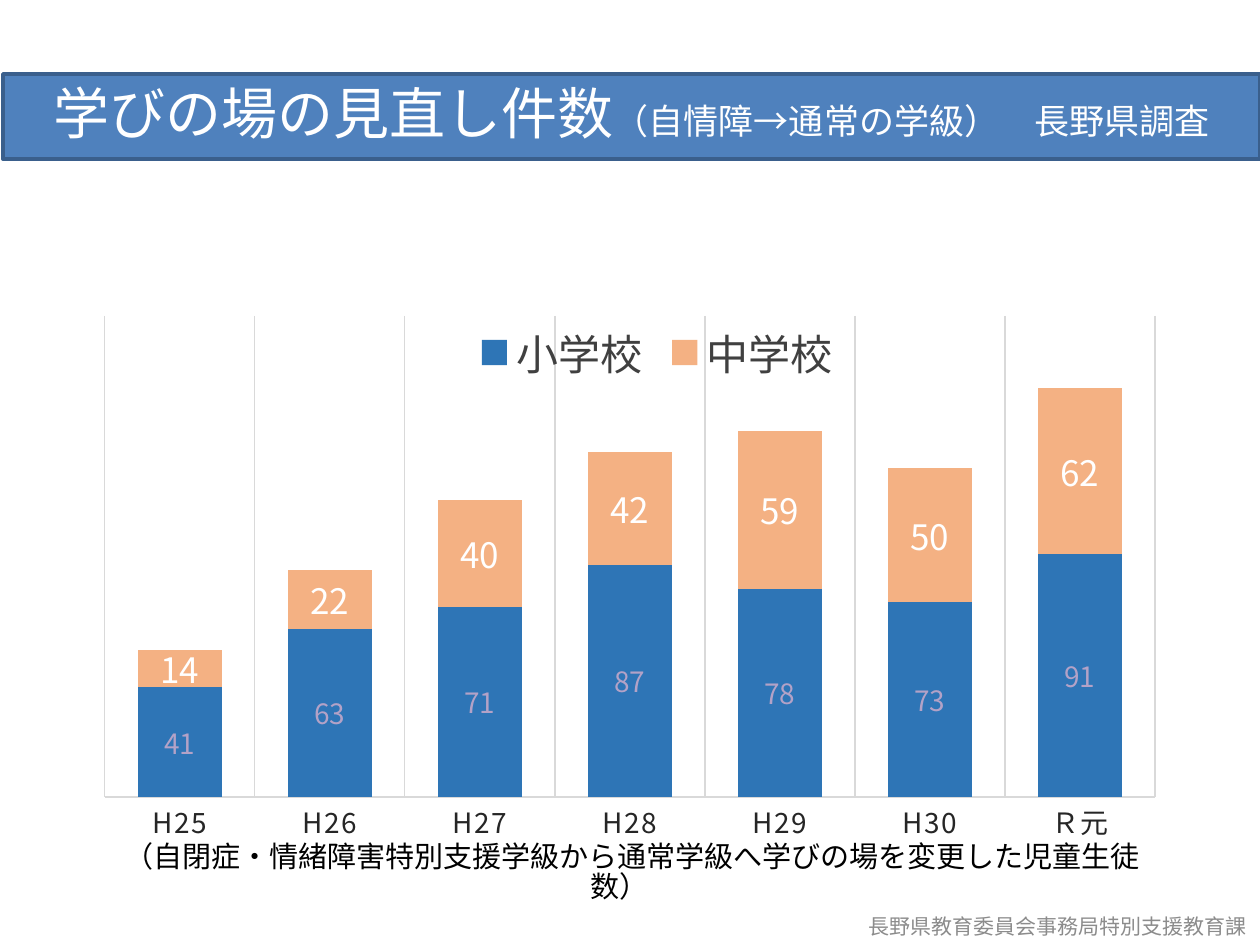
from dataclasses import dataclass

from lxml import etree
from pptx import Presentation
from pptx.chart.data import CategoryChartData
from pptx.dml.color import RGBColor
from pptx.enum.chart import (XL_CHART_TYPE, XL_LABEL_POSITION,
                             XL_LEGEND_POSITION, XL_TICK_MARK)
from pptx.enum.shapes import MSO_SHAPE
from pptx.enum.text import MSO_ANCHOR, PP_ALIGN
from pptx.oxml.ns import qn
from pptx.util import Emu, Pt

STACKED = XL_CHART_TYPE.COLUMN_STACKED
MID_LABEL = XL_LABEL_POSITION.CENTER
LEGEND_TOP = XL_LEGEND_POSITION.TOP
NO_TICK = XL_TICK_MARK.NONE
RECT = MSO_SHAPE.RECTANGLE
TOP, MIDDLE = MSO_ANCHOR.TOP, MSO_ANCHOR.MIDDLE
CENTER = PP_ALIGN.CENTER

PX = 914400 / 126
NOTO = "Noto Sans CJK JP"
GRID = "D9D9D9"
YEARS = ["H25", "H26", "H27", "H28", "H29", "H30", "Ｒ元"]


@dataclass
class Box:
    left: int
    top: int
    width: int
    height: int

    def emu(self) -> list[Emu]:
        return [Emu(round(n * PX)) for n in
                (self.left, self.top, self.width, self.height)]


@dataclass
class Run:
    text: str
    size: float
    color: str
    face: str = NOTO


@dataclass
class School:
    name: str
    counts: list[int]
    fill: str
    size: int
    color: str


SCHOOLS = [
    School("小学校", [41, 63, 71, 87, 78, 73, 91], "2E75B6", 16, "B3A2C7"),
    School("中学校", [14, 22, 40, 42, 59, 50, 62], "F4B183", 20, "FFFFFF"),
]


def rgb(value: str) -> RGBColor:
    return RGBColor.from_string(value)


def style(font, size: float, color: str, face: str = NOTO) -> None:
    font.size = Pt(size)
    font.color.rgb = rgb(color)
    font.name = face
    etree.SubElement(font._element, qn("a:ea")).set("typeface", NOTO)


def write(shape, runs: list[Run], anchor, spacing: float = 1.0):
    """Fill a shape with one centred paragraph."""
    frame = shape.text_frame
    frame.word_wrap = True
    frame.vertical_anchor = anchor
    para = frame.paragraphs[0]
    para.alignment = CENTER
    para.line_spacing = spacing
    for item in runs:
        run = para.add_run()
        run.text = item.text
        style(run.font, item.size, item.color, item.face)
    return frame


def place(parent, index: int, target: str | None, **spots: float) -> None:
    """Give a chart part a manual layout, in fractions of the chart."""
    for old in parent.findall(qn("c:layout")):
        parent.remove(old)
    layout = etree.Element(qn("c:layout"))
    manual = etree.SubElement(layout, qn("c:manualLayout"))
    parts = {"layoutTarget": target} if target else {}
    parts |= {"xMode": "edge", "yMode": "edge"} | spots
    for tag, value in parts.items():
        etree.SubElement(manual, qn(f"c:{tag}")).set("val", str(value))
    parent.insert(index, layout)


def draw_chart(slide, box: Box) -> None:
    data = CategoryChartData()
    data.categories = YEARS
    for school in SCHOOLS:
        data.add_series(school.name, school.counts)
    chart = slide.shapes.add_chart(STACKED, *box.emu(), data).chart
    chart.has_title = False
    chart.font.size = Pt(10)
    chart.font.name = "Calibri"

    plot = chart.plots[0]
    plot.gap_width, plot.overlap = 79, 100
    plot.vary_by_categories = False
    for series, school in zip(plot.series, SCHOOLS):
        series.format.fill.solid()
        series.format.fill.fore_color.rgb = rgb(school.fill)
        labels = series.data_labels
        labels.show_value = True
        labels.position = MID_LABEL
        style(labels.font, school.size, school.color)

    years = chart.category_axis
    years.major_tick_mark = years.minor_tick_mark = NO_TICK
    years.has_major_gridlines = True
    for line in (years.format.line, years.major_gridlines.format.line):
        line.color.rgb = rgb(GRID)
        line.width = Pt(0.75)
    label = years.tick_labels.font
    style(label, 16, "262626")
    label._element.set("spc", "120")

    counts = chart.value_axis
    counts.minimum_scale, counts.maximum_scale = 0, 180
    counts.has_major_gridlines = False
    counts.visible = False

    chart.has_legend = True
    legend = chart.legend
    legend.position = LEGEND_TOP
    legend.include_in_layout = False
    style(legend.font, 24, "404040")
    place(legend._element, 1, None, x=0.36, y=0.09, w=0.35, h=0.09)
    place(chart._chartSpace.chart.plotArea, 0, "inner",
          x=0.03, y=0.08, w=0.96, h=0.77)


def draw_banner(slide, box: Box) -> None:
    banner = slide.shapes.add_shape(RECT, *box.emu())
    banner.shadow.inherit = False
    banner.fill.solid()
    banner.fill.fore_color.rgb = rgb("4F81BD")
    banner.line.color.rgb = rgb("3A5F8C")
    banner.line.width = Pt(2)
    write(banner, [
        Run("学びの場の見直し件数", 32, "FFFFFF"),
        Run("（自情障→通常の学級）　長野県調査", 20, "FFFFFF"),
    ], MIDDLE, 0.9)


def main() -> None:
    deck = Presentation()
    deck.slide_width, deck.slide_height = Box(0, 0, 1260, 945).emu()[2:]
    slide = deck.slides.add_slide(deck.slide_layouts[6])

    draw_chart(slide, Box(72, 266, 1094, 625))

    note = slide.shapes.add_textbox(*Box(81, 824, 1076, 78).emu())
    frame = write(note, [Run(
        "（自閉症・情緒障害特別支援学級から通常学級へ学びの場を変更した児童生徒数）",
        16.6, "000000")], TOP, 0.86)
    frame.margin_top = Emu(round(20 * PX))
    frame.paragraphs[0]._p.get_or_add_pPr().set("indent", str(round(25 * PX)))

    draw_banner(slide, Box(3, 74, 1257, 85))

    source = slide.shapes.add_textbox(*Box(832, 901, 451, 50).emu())
    write(source, [Run("長野県教育委員会事務局特別支援教育課", 12, "8C8C8C",
                       "Calibri")], MIDDLE)
    deck.save("out.pptx")


if __name__ == "__main__":
    main()
